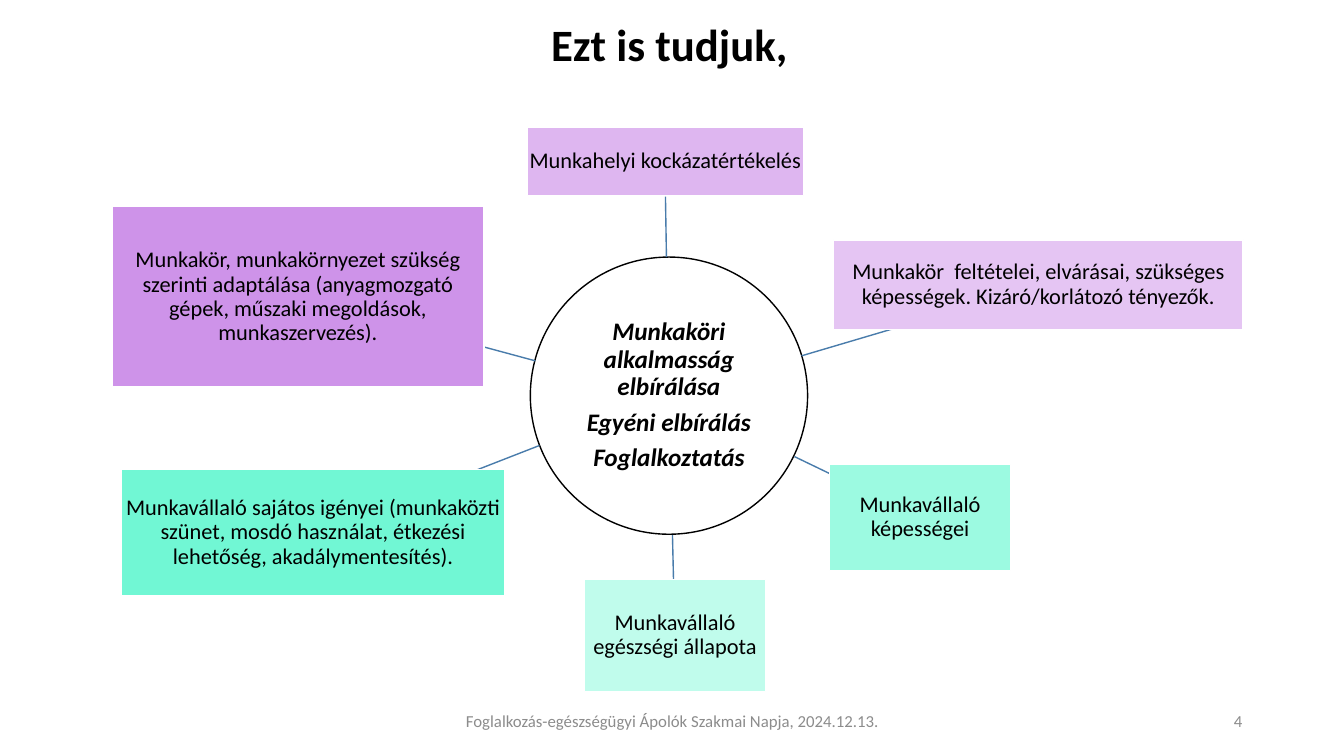
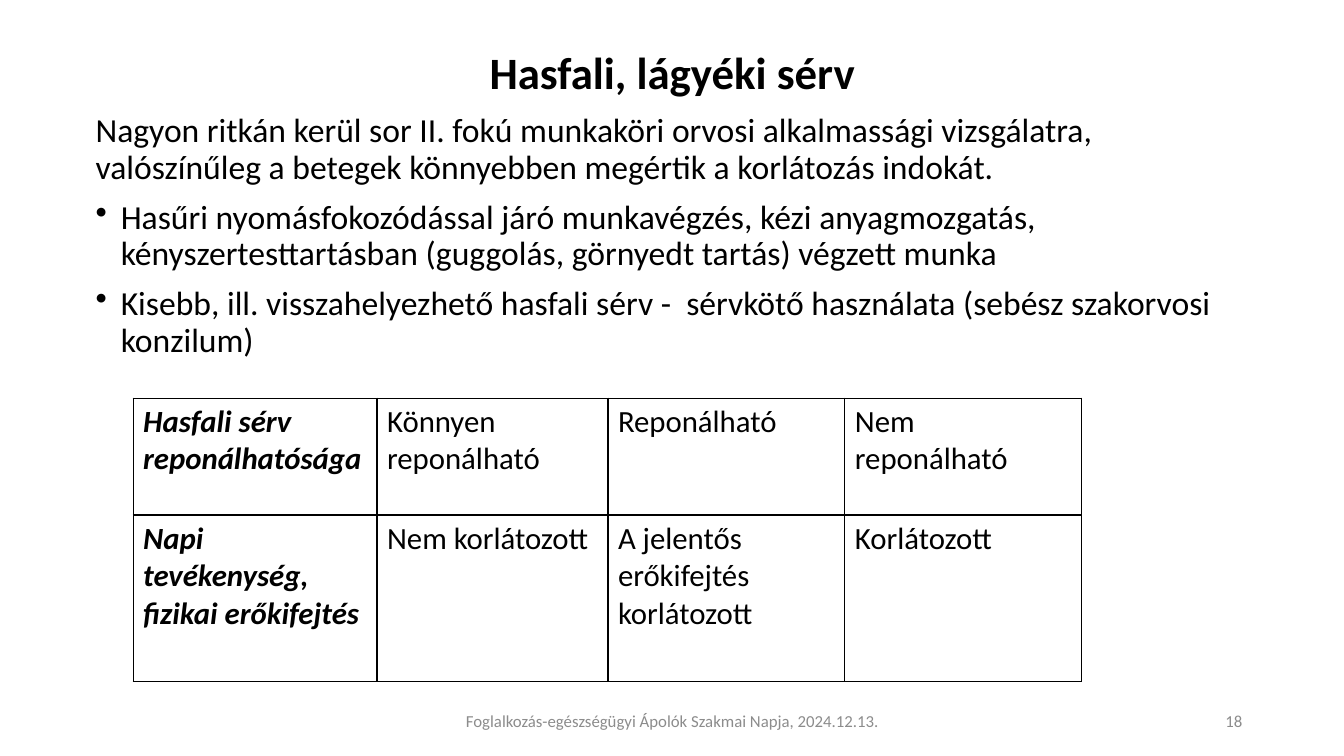
"""Two slides on fitness for work: a hub diagram and a hernia table."""
from dataclasses import dataclass

from pptx import Presentation
from pptx import util as u
from pptx.dml.color import RGBColor
from pptx.enum import shapes, text
from pptx.oxml.xmlchemy import OxmlElement

PX = 9144
FONT = "Calibri"
BLACK = RGBColor(0, 0, 0)
WHITE = RGBColor(255, 255, 255)
GRAY = RGBColor(0x8C, 0x8C, 0x8C)
BLUE = RGBColor(0x49, 0x7C, 0xAB)
FOOT = "Foglalkozás-egészségügyi Ápolók Szakmai Napja, 2024.12.13."
ALIGN = text.PP_ALIGN
MIDDLE = text.MSO_ANCHOR.MIDDLE
TOP = text.MSO_ANCHOR.TOP


@dataclass(frozen=True)
class Box:
    """A frame in px."""
    x: int
    y: int
    w: int
    h: int

    def emu(self) -> list[int]:
        """Give left, top, width and height in EMU."""
        return [n * PX for n in (self.x, self.y, self.w, self.h)]


@dataclass(frozen=True)
class Style:
    """The look of a text."""
    size: int
    color: RGBColor = BLACK
    bold: bool = False
    slant: bool = False
    align: ALIGN = ALIGN.CENTER
    lead: float = 1.0


@dataclass(frozen=True)
class Node:
    """A box of the diagram and the line that ties it to the hub."""
    words: str
    box: Box
    fill: RGBColor
    line: tuple[int, int, int, int]


TITLE = Style(32, bold=True, lead=0.9)
NOTE = Style(12, GRAY)
PAGE = Style(12, GRAY, align=ALIGN.RIGHT)
HUB = Style(18, bold=True, slant=True, lead=0.9)
NODE = Style(16, lead=0.9)
BODY = Style(24, align=ALIGN.LEFT, lead=0.9)
CELL = Style(22, align=ALIGN.LEFT)
HEAD = Style(22, bold=True, slant=True, align=ALIGN.LEFT)

NODES = (
    Node("Munkahelyi kockázatértékelés", Box(523, 126, 274, 68),
         RGBColor(0xDE, 0xB6, 0xF0), (661, 255, 660, 195)),
    Node("Munkakör  feltételei, elvárásai, szükséges képességek. "
         "Kizáró/korlátozó tényezők.", Box(827, 238, 406, 89),
         RGBColor(0xE5, 0xC5, 0xF3), (795, 353, 910, 319)),
    Node("Munkavállaló képességei", Box(823, 461, 179, 105),
         RGBColor(0x9C, 0xFA, 0xE1), (788, 453, 844, 480)),
    Node("Munkavállaló egészségi állapota", Box(580, 575, 179, 111),
         RGBColor(0xC0, 0xFC, 0xEC), (667, 531, 668, 575)),
    Node("Munkavállaló sajátos igényei (munkaközti szünet, mosdó használat, "
         "étkezési lehetőség, akadálymentesítés).", Box(120, 466, 381, 125),
         RGBColor(0x71, 0xF7, 0xD4), (535, 442, 435, 481)),
    Node("Munkakör, munkakörnyezet szükség szerinti adaptálása (anyagmozgató "
         "gépek, műszaki megoldások, munkaszervezés).", Box(111, 205, 369, 179),
         RGBColor(0xCE, 0x93, 0xE9), (531, 358, 457, 338)),
)
CORE = ("Munkaköri alkalmasság elbírálása", "Egyéni elbírálás", "Foglalkoztatás")
POINTS = (
    "Nagyon ritkán kerül sor II. fokú munkaköri orvosi alkalmassági vizsgálatra, "
    "valószínűleg a betegek könnyebben megértik a korlátozás indokát.",
    "Hasűri nyomásfokozódással járó munkavégzés, kézi anyagmozgatás, "
    "kényszertesttartásban (guggolás, görnyedt tartás) végzett munka",
    "Kisebb, ill. visszahelyezhető hasfali sérv -  sérvkötő használata "
    "(sebész szakorvosi konzilum)",
)
ROWS = (
    ("Hasfali sérv reponálhatósága", "Könnyen reponálható", "Reponálható",
     "Nem reponálható"),
    ("Napi tevékenység, fizikai erőkifejtés", "Nem korlátozott",
     "A jelentős erőkifejtés korlátozott", "Korlátozott"),
)
WIDTHS = (242, 229, 235, 235)
HEIGHTS = (116, 165)


def write(frame, words: str, style: Style, gap: int = 0) -> None:
    """Fill a text frame, one paragraph a line."""
    frame.text = words
    for i, par in enumerate(frame.paragraphs):
        par.alignment = style.align
        par.line_spacing = style.lead
        par.space_before = u.Pt(gap if i else 0)
        for run in par.runs:
            font = run.font
            font.name, font.size = FONT, u.Pt(style.size)
            font.bold, font.italic = style.bold, style.slant
            font.color.rgb = style.color


def label(slide, box: Box, words: str, style: Style, anchor=MIDDLE, gap: int = 0):
    """Add a wrapped text box."""
    frame = slide.shapes.add_textbox(*box.emu()).text_frame
    frame.word_wrap = True
    frame.vertical_anchor = anchor
    write(frame, words, style, gap)
    return frame


def panel(slide, kind, box: Box, fill: RGBColor, edge: RGBColor,
          words: str, style: Style) -> None:
    """Add a filled shape with text."""
    shape = slide.shapes.add_shape(kind, *box.emu())
    shape.shadow.inherit = False
    shape.fill.solid()
    shape.fill.fore_color.rgb = fill
    shape.line.color.rgb = edge
    shape.line.width = u.Pt(1)
    frame = shape.text_frame
    frame.word_wrap = True
    frame.vertical_anchor = MIDDLE
    frame.margin_left = frame.margin_right = PX
    frame.margin_top = frame.margin_bottom = PX
    write(frame, words, style, 6)


def link(slide, ends: tuple[int, int, int, int]) -> None:
    """Add a thin straight line."""
    line = slide.shapes.add_connector(
        shapes.MSO_CONNECTOR.STRAIGHT, *(n * PX for n in ends))
    line.line.color.rgb = BLUE
    line.line.width = u.Pt(1)
    line._element.spPr.append(OxmlElement("a:effectLst"))


def bullet(par) -> None:
    """Give a paragraph a hanging bullet."""
    props = par._p.get_or_add_pPr()
    props.set("marL", str(25 * PX))
    props.set("indent", str(-25 * PX))
    mark = OxmlElement("a:buChar")
    mark.set("char", "•")
    props.append(mark)


def border(cell) -> None:
    """Draw black lines round a cell."""
    props = cell._tc.get_or_add_tcPr()
    for side in "LRTB":
        line = OxmlElement(f"a:ln{side}")
        line.set("w", str(u.Pt(1)))
        fill = OxmlElement("a:solidFill")
        color = OxmlElement("a:srgbClr")
        color.set("val", str(BLACK))
        fill.append(color)
        line.append(fill)
        props.append(line)


def grid(slide, box: Box) -> None:
    """Add the table of limits."""
    table = slide.shapes.add_table(len(ROWS), len(WIDTHS), *box.emu()).table
    table.first_row = table.horz_banding = False
    for col, wide in zip(table.columns, WIDTHS):
        col.width = wide * PX
    for row, high, cells in zip(table.rows, HEIGHTS, ROWS):
        row.height = high * PX
        for i, (cell, words) in enumerate(zip(row.cells, cells)):
            border(cell)
            cell.fill.background()
            write(cell.text_frame, words, CELL if i else HEAD)


def start(deck, title: str, box: Box, page: int):
    """Add a slide with title, footer and page number."""
    slide = deck.slides.add_slide(deck.slide_layouts[6])
    label(slide, box, title, TITLE)
    label(slide, Box(442, 695, 450, 40), FOOT, NOTE)
    label(slide, Box(942, 695, 300, 40), str(page), PAGE)
    return slide


def hub(deck) -> None:
    """Build the diagram slide."""
    slide = start(deck, "Ezt is tudjuk,", Box(89, 17, 1150, 60), 4)
    panel(slide, shapes.MSO_SHAPE.OVAL, Box(526, 255, 275, 275), WHITE, BLACK,
          "\n".join(CORE), HUB)
    for node in NODES:
        link(slide, node.line)
        panel(slide, shapes.MSO_SHAPE.RECTANGLE, node.box, node.fill, WHITE,
              node.words, NODE)


def hernia(deck) -> None:
    """Build the table slide."""
    slide = start(deck, "Hasfali, lágyéki sérv", Box(92, 32, 1150, 84), 18)
    frame = label(slide, Box(85, 108, 1150, 270), "\n".join(POINTS), BODY, TOP, 10)
    for par in frame.paragraphs[1:]:
        bullet(par)
    grid(slide, Box(132, 395, sum(WIDTHS), sum(HEIGHTS)))


def main() -> None:
    """Build and save the deck."""
    deck = Presentation()
    deck.slide_width, deck.slide_height = 1333 * PX, 750 * PX
    hub(deck)
    hernia(deck)
    deck.save("out.pptx")


if __name__ == "__main__":
    main()
